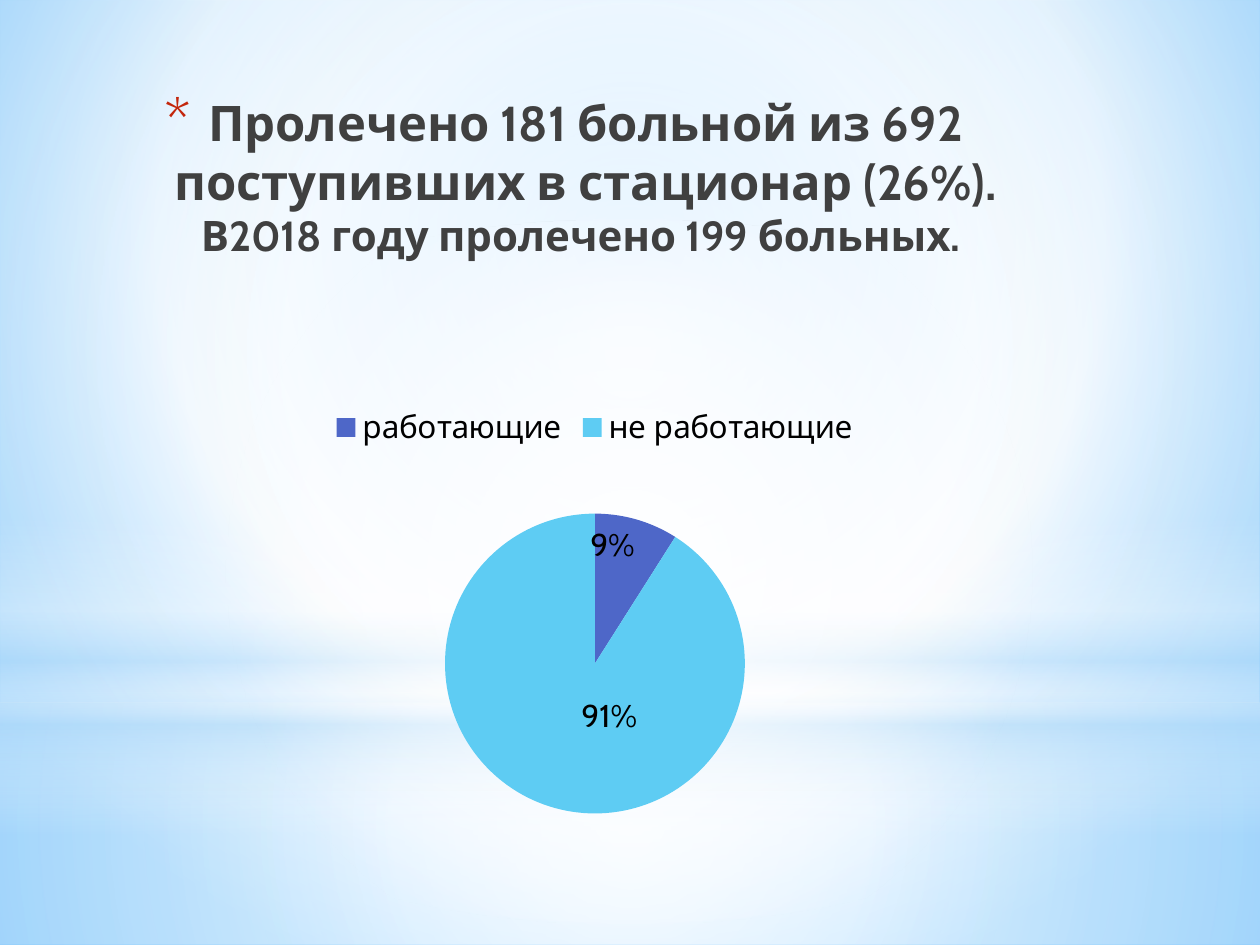
from lxml.etree import SubElement
from pptx import Presentation
from pptx.chart.data import CategoryChartData
from pptx.dml.color import RGBColor
from pptx.enum.chart import XL_CHART_TYPE as Chart, XL_LABEL_POSITION as LabelAt, XL_LEGEND_POSITION as LegendAt
from pptx.enum.shapes import MSO_SHAPE as Preset
from pptx.enum.text import MSO_ANCHOR as Anchor, PP_ALIGN as Align
from pptx.oxml import parse_xml
from pptx.oxml.ns import nsdecls, qn
from pptx.util import Emu, Pt

COLORS = {
    "white": "FFFFFF", "haze": "B4DCFA", "sky": "9ED5FF", "azure": "5BB9FF",
    "title": "404040", "bullet": "C3260C", "black": "000000",
    "working": "4E67C8", "idle": "5ECCF3",
}
FONT = "Cabin"


def px(value):
    return Emu(round(value * 914400 / 126))


def rgb(name):
    return RGBColor.from_string(COLORS[name])


def gradient(stops, focus=None, angle=0):
    stop_xml = "".join(
        f'<a:gs pos="{at * 1000}"><a:srgbClr val="{COLORS[name]}">'
        f'<a:alpha val="{alpha * 1000}"/></a:srgbClr></a:gs>'
        for at, name, alpha in stops)
    if focus:
        sides = " ".join(f'{side}="{part * 1000}"' for side, part in zip("ltrb", focus))
        shade = f'<a:path path="circle"><a:fillToRect {sides}/></a:path>'
    else:
        shade = f'<a:lin ang="{angle * 60000}" scaled="0"/>'
    return parse_xml(f'<a:gradFill rotWithShape="1" {nsdecls("a")}><a:gsLst>{stop_xml}</a:gsLst>{shade}</a:gradFill>')


def add_text(para, text, size, bold=True, color="title"):
    span = para.add_run()
    span.text = text
    span.font.name, span.font.size, span.font.bold = FONT, Pt(size), bold
    span.font.color.rgb = rgb(color)


def add_layout(parent, **values):
    layout = parse_xml(f'<c:layout {nsdecls("c")}><c:manualLayout/></c:layout>')
    for tag, value in values.items():
        SubElement(layout[0], qn(f"c:{tag}")).set("val", str(value))
    for old in parent.findall(qn("c:layout")):
        parent.remove(old)
    parent.insert(1 if parent.tag == qn("c:dLbl") else 0, layout)


class SlideBuilder:
    def __init__(self, page):
        self.page = page

    def background(self, stops, focus):
        self.page.background.fill.solid()
        properties = self.page._element.xpath(".//p:bgPr")[0]
        properties.replace(properties[0], gradient(stops, focus))

    def glow(self, preset, frame, stops, **shade):
        shape = self.page.shapes.add_shape(preset, *map(px, frame))
        shape.shadow.inherit = False
        shape.line.fill.background()
        shape.fill.solid()
        properties = shape._element.spPr
        properties.replace(properties.find(qn("a:solidFill")), gradient(stops, **shade))

    def heading(self, frame, lines):
        box = self.page.shapes.add_textbox(*map(px, frame))
        text_frame = box.text_frame
        text_frame.word_wrap = True
        text_frame.vertical_anchor = Anchor.TOP
        para = text_frame.paragraphs[0]
        para.alignment = Align.CENTER
        properties = para._p.get_or_add_pPr()
        properties.set("marL", str(px(44)))
        properties.set("indent", str(-px(44)))
        color = SubElement(SubElement(properties, qn("a:buClr")), qn("a:srgbClr"))
        color.set("val", COLORS["bullet"])
        SubElement(properties, qn("a:buSzPct")).set("val", "128000")
        SubElement(properties, qn("a:buFont")).set("typeface", FONT)
        SubElement(properties, qn("a:buChar")).set("char", "*")
        for index, (text, size) in enumerate(lines):
            if index:
                para.add_line_break()
            add_text(para, text, size)

    def pie(self, frame, shares, colors):
        data = CategoryChartData()
        data.categories = list(shares)
        data.add_series("Series 1", list(shares.values()))
        chart = self.page.shapes.add_chart(Chart.PIE, *map(px, frame), data).chart
        chart.has_title = False
        chart.font.name, chart.font.size = FONT, Pt(18)
        chart.font.color.rgb = rgb("black")
        chart.has_legend = True
        chart.legend.position = LegendAt.TOP
        chart.legend.include_in_layout = False
        chart.plots[0].vary_by_categories = True
        series = chart.plots[0].series[0]
        for index, color in enumerate(colors):
            fill = series.points[index].format.fill
            fill.solid()
            fill.fore_color.rgb = rgb(color)
        labels = series.data_labels
        labels.show_percentage, labels.show_value = True, False
        labels.number_format, labels.number_format_is_linked = "0%", False
        labels.position = LabelAt.INSIDE_END
        series.points[1].data_label.position = LabelAt.CENTER
        label = chart._chartSpace.xpath(".//c:dLbl")[0]
        label.find(qn("c:showVal")).set("val", "0")
        label.find(qn("c:showPercent")).set("val", "1")
        add_layout(label, x=0.04, y=-0.04)
        add_layout(chart._chartSpace.xpath(".//c:plotArea")[0], layoutTarget="inner",
                   xMode="edge", yMode="edge", x=0.33, y=0.25, w=0.34, h=0.63)


def main():
    deck = Presentation()
    deck.slide_width, deck.slide_height = px(1260), px(945)
    builder = SlideBuilder(deck.slides.add_slide(deck.slide_layouts[6]))
    center = (50, 50, 50, 50)
    horizon = 703

    builder.background([(0, "sky", 100), (60, "white", 100), (100, "azure", 100)], (20, 10, 20, 60))
    builder.glow(Preset.RECTANGLE, (0, horizon, 1260, 945 - horizon),
                 [(0, "white", 91), (37, "white", 76), (100, "haze", 79)], focus=center)
    builder.glow(Preset.RECTANGLE, (0, 0, 1260, horizon),
                 [(0, "white", 89), (48, "white", 62), (100, "haze", 79)], focus=center)
    builder.glow(Preset.RECTANGLE, (0, 519, 1260, 315),
                 [(0, "white", 0), (29, "white", 30), (45, "haze", 40),
                  (55, "white", 26), (65, "haze", 60), (100, "white", 0)], angle=90)
    builder.glow(Preset.OVAL, (0, 220, 1260, horizon),
                 [(0, "white", 100), (56, "white", 0)], focus=center)
    builder.heading((115, 86, 897, 158), [
        ("Пролечено 181 больной из 692 поступивших в стационар (26%).", 28),
        ("В2018 году пролечено 199 больных. ", 24)])
    builder.pie((154, 393, 882, 479), {"работающие": 9, "не работающие": 91}, ["working", "idle"])
    deck.save("out.pptx")


if __name__ == "__main__":
    main()
